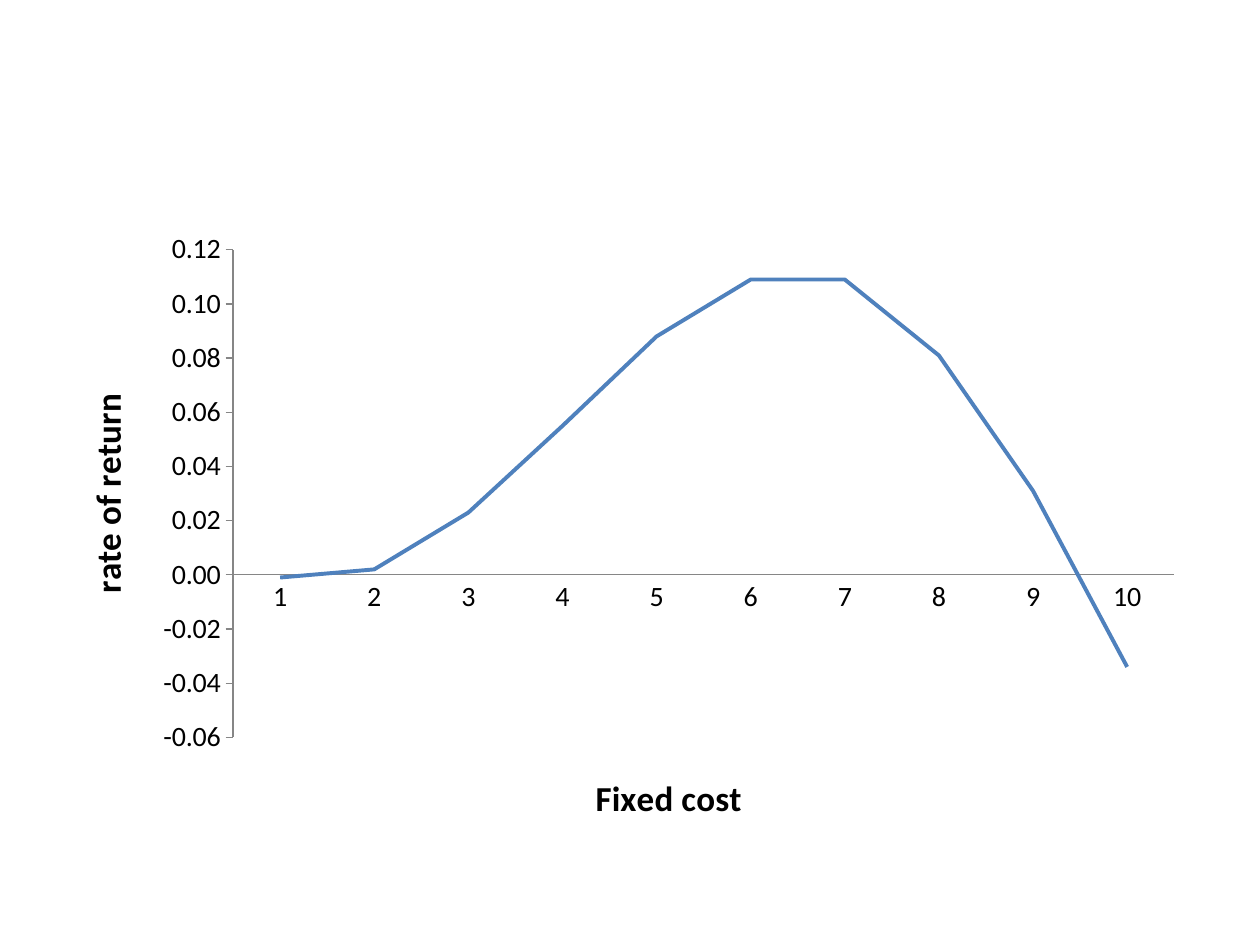
from lxml import etree
from pptx import Presentation
from pptx.chart.data import CategoryChartData
from pptx.dml.color import RGBColor
from pptx.enum import chart as ch
from pptx.oxml import ns
from pptx.util import Pt

BLACK = RGBColor(0x00, 0x00, 0x00)
BLUE = RGBColor(0x4F, 0x81, 0xBD)
GRAY = RGBColor(0x86, 0x86, 0x86)

deck = Presentation()
deck.slide_width, deck.slide_height = Pt(720), Pt(540)
slide = deck.slides.add_slide(deck.slide_layouts[6])

returns = CategoryChartData(number_format="0.00")
returns.categories = [str(cost) for cost in range(1, 11)]
returns.add_series("Series 1", [-0.001, 0.002, 0.023, 0.055, 0.088,
                                0.109, 0.109, 0.081, 0.031, -0.034])
return_curve = slide.shapes.add_chart(
    ch.XL_CHART_TYPE.LINE, Pt(36), Pt(126), Pt(648), Pt(356.4), returns).chart
return_curve.has_legend = False
return_curve.has_title = False
return_curve.font.name = "Calibri"
return_curve.font.size = Pt(10)
return_curve.font.color.rgb = BLACK

cost_axis = return_curve.category_axis
return_axis = return_curve.value_axis
for axis, caption, tick in (
        (cost_axis, "Fixed cost", ch.XL_TICK_MARK.NONE),
        (return_axis, "rate of return", ch.XL_TICK_MARK.OUTSIDE)):
    axis.has_major_gridlines = False
    axis.major_tick_mark = tick
    axis.minor_tick_mark = ch.XL_TICK_MARK.NONE
    axis.tick_label_position = ch.XL_TICK_LABEL_POSITION.NEXT_TO_AXIS
    axis.tick_labels.font.size = Pt(16)
    axis.format.line.color.rgb = GRAY
    axis.format.line.width = Pt(0.75)
    axis.axis_title.text_frame.text = caption
    caption_font = axis.axis_title.text_frame.paragraphs[0].runs[0].font
    caption_font.name = "Calibri"
    caption_font.size = Pt(20)
    caption_font.bold = True
    caption_font.color.rgb = BLACK

return_axis.minimum_scale = -0.06
return_axis.maximum_scale = 0.12
return_axis.major_unit = 0.02
return_axis.tick_labels.number_format = "0.00"
return_axis.tick_labels.number_format_is_linked = False

plot = return_curve.plots[0]
plot.vary_by_categories = False
curve = plot.series[0]
curve.smooth = False
curve.marker.style = ch.XL_MARKER_STYLE.NONE
curve.format.line.color.rgb = BLUE
curve.format.line.width = Pt(2.25)

plot_area = return_curve.element.find(".//" + ns.qn("c:plotArea"))
for old_layout in plot_area.findall(ns.qn("c:layout")):
    plot_area.remove(old_layout)
layout = etree.Element(ns.qn("c:layout"))
manual = etree.SubElement(layout, ns.qn("c:manualLayout"))
for tag, value in (("layoutTarget", "inner"), ("xMode", "edge"), ("yMode", "edge"),
                   ("x", "0.15"), ("y", "0.047"), ("w", "0.83"), ("h", "0.782")):
    etree.SubElement(manual, ns.qn("c:" + tag)).set("val", value)
plot_area.insert(0, layout)

deck.save("out.pptx")
